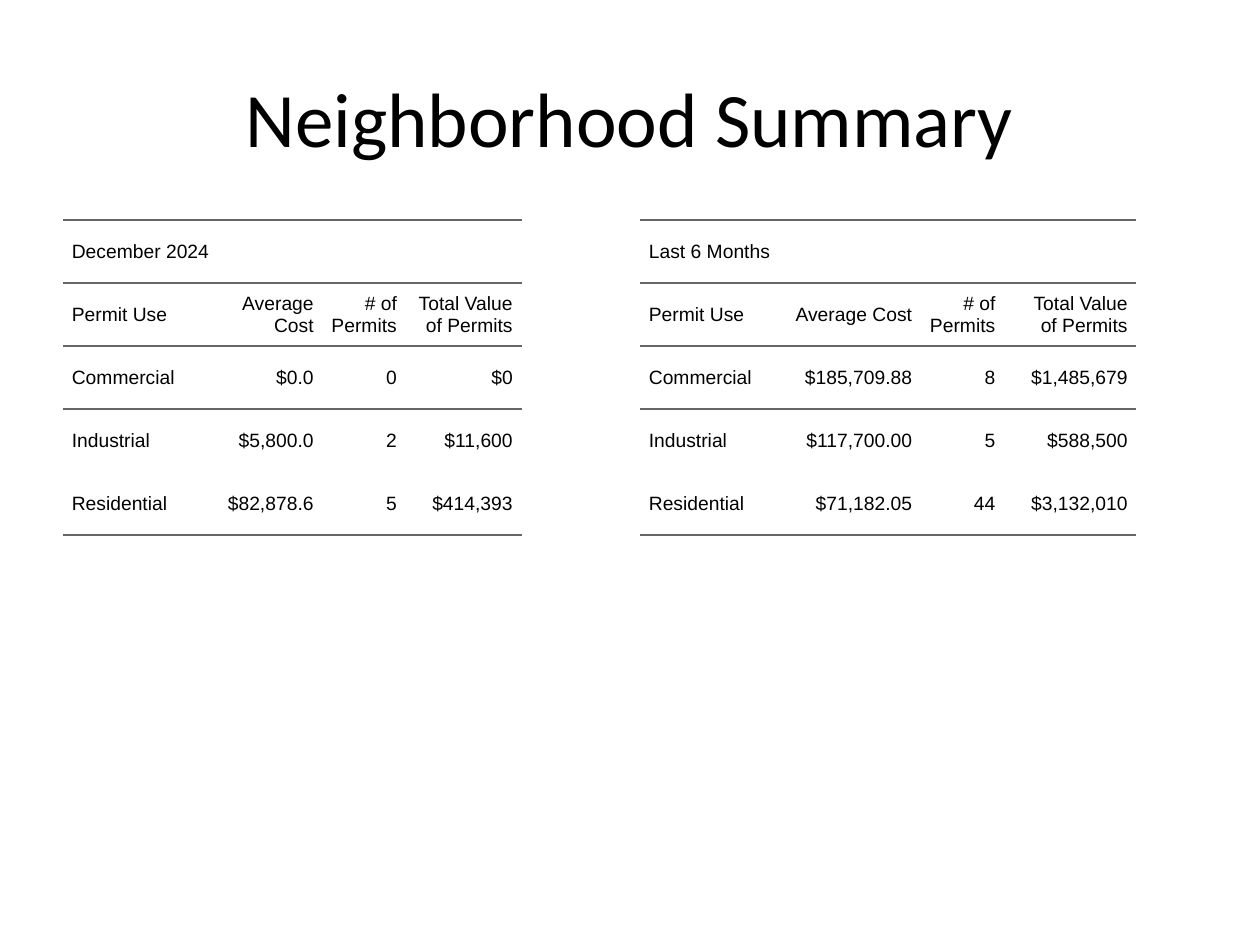
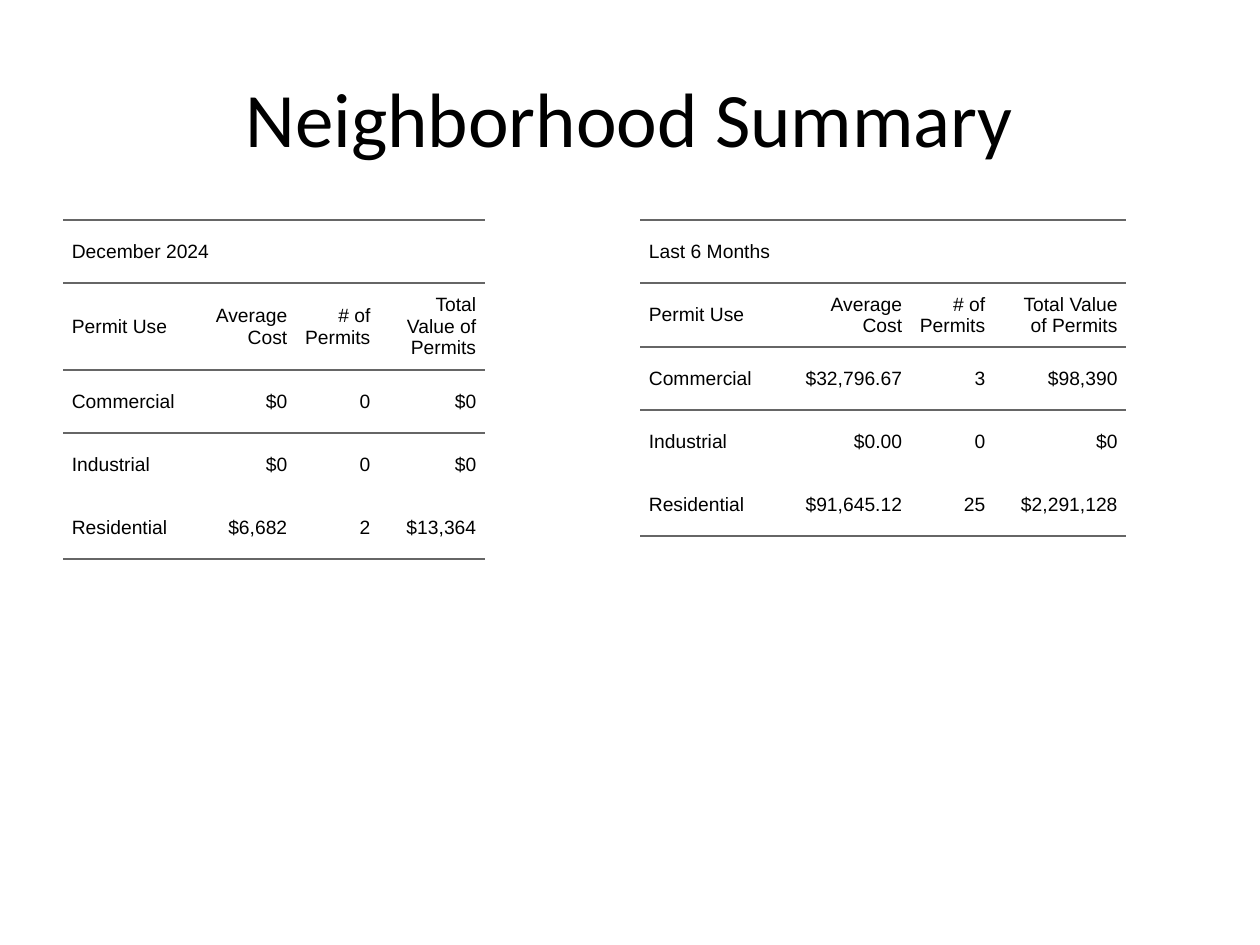
from lxml.etree import SubElement
from pptx import Presentation
from pptx.dml.color import RGBColor
from pptx.enum.text import MSO_ANCHOR, PP_ALIGN
from pptx.oxml.ns import qn
from pptx.util import Inches, Pt

BLACK = RGBColor(0x00, 0x00, 0x00)
RULE_GRAY = RGBColor(0x66, 0x66, 0x66)
TITLE_FONT = "Calibri"
TABLE_FONT = "Arial"
PLAIN_TABLE_STYLE = "{2D5ABB26-0587-4C30-8999-92F81FD0307C}"

SLIDE_WIDTH, SLIDE_HEIGHT = Inches(10), Inches(7.5)
MARGIN = 0.05
TITLE_TOP, TITLE_HEIGHT = 0.04, 1 / 6
TABLE_TOP, TABLE_HEIGHT, TABLE_WIDTH = 0.233, 0.66, 0.442
TABLE_LEFTS = (MARGIN, 1 - MARGIN - TABLE_WIDTH)
ROW_HEIGHT = Inches(0.5)
CELL_PADDING = Inches(0.07)
RULE_WIDTH = Pt(1.5)

TITLE = "Neighborhood Summary"
PERIODS = ("December 2024", "Last 6 Months")
HEADINGS = ("Permit Use", "Average Cost", "# of Permits", "Total Value of Permits")
PERMIT_USES = ("Commercial", "Industrial", "Residential")

SUMMARIES = (
    (
        ((1.1, 0.96, 0.66, 0.92),
         (("$0.0", "0", "$0"),
          ("$5,800.0", "2", "$11,600"),
          ("$82,878.6", "5", "$414,393"))),
        ((1.1, 1.13, 0.66, 1.05),
         (("$185,709.88", "8", "$1,485,679"),
          ("$117,700.00", "5", "$588,500"),
          ("$71,182.05", "44", "$3,132,010"))),
    ),
    (
        ((1.1, 0.75, 0.66, 0.84),
         (("$0", "0", "$0"),
          ("$0", "0", "$0"),
          ("$6,682", "2", "$13,364"))),
        ((1.1, 1.05, 0.66, 1.05),
         (("$32,796.67", "3", "$98,390"),
          ("$0.00", "0", "$0"),
          ("$91,645.12", "25", "$2,291,128"))),
    ),
)


def share_box(left, top, width, height):
    """Turn shares of the slide into lengths."""
    return (int(left * SLIDE_WIDTH), int(top * SLIDE_HEIGHT),
            int(width * SLIDE_WIDTH), int(height * SLIDE_HEIGHT))


def write_text(text_frame, text, font, size, align=PP_ALIGN.LEFT, spacing=0):
    """Write one formatted paragraph."""
    text_frame.word_wrap = True
    paragraph = text_frame.paragraphs[0]
    paragraph.alignment = align
    paragraph.space_before = paragraph.space_after = Pt(spacing)
    run = paragraph.add_run()
    run.text = text
    run.font.name = font
    run.font.size = Pt(size)
    run.font.color.rgb = BLACK


def add_title(slide, text):
    """Add the centred slide title."""
    box = slide.shapes.add_textbox(
        *share_box(MARGIN, TITLE_TOP, 1 - 2 * MARGIN, TITLE_HEIGHT))
    box.text_frame.vertical_anchor = MSO_ANCHOR.MIDDLE
    write_text(box.text_frame, text, font=TITLE_FONT, size=44, align=PP_ALIGN.CENTER)


def add_rule(cell, side):
    """Draw a gray rule on one side of a cell."""
    properties = cell._tc.get_or_add_tcPr()
    line = SubElement(properties, qn(f"a:{side}"), w=str(RULE_WIDTH))
    fill = SubElement(line, qn("a:solidFill"))
    SubElement(fill, qn("a:srgbClr"), val=str(RULE_GRAY))


def format_cell(cell, row, last_row):
    """Set the padding, rules and fill of a cell."""
    cell.vertical_anchor = MSO_ANCHOR.MIDDLE
    cell.margin_left = cell.margin_right = CELL_PADDING
    cell.margin_top = cell.margin_bottom = CELL_PADDING
    if row <= 2:
        add_rule(cell, "lnT")
    if row <= 1 or row == last_row:
        add_rule(cell, "lnB")
    cell.fill.background()


def add_permit_table(slide, left, period, column_widths, figures):
    """Add a permit table with its period spanning the first row."""
    rows = [(period,), HEADINGS]
    rows += [(use, *values) for use, values in zip(PERMIT_USES, figures)]
    box = share_box(left, TABLE_TOP, TABLE_WIDTH, TABLE_HEIGHT)
    frame = slide.shapes.add_table(len(rows), len(HEADINGS), *box)
    table = frame.table
    table.first_row = table.horz_banding = False
    frame._element.find(".//" + qn("a:tableStyleId")).text = PLAIN_TABLE_STYLE
    for column, width in zip(table.columns, column_widths):
        column.width = Inches(width)
    for row in table.rows:
        row.height = ROW_HEIGHT
    frame.left, frame.top, frame.width, frame.height = box
    table.cell(0, 0).merge(table.cell(0, len(HEADINGS) - 1))
    for row, texts in enumerate(rows):
        for column in range(len(HEADINGS)):
            format_cell(table.cell(row, column), row, len(rows) - 1)
        for column, text in enumerate(texts):
            write_text(table.cell(row, column).text_frame, text,
                       font=TABLE_FONT, size=11, spacing=5,
                       align=PP_ALIGN.RIGHT if column else PP_ALIGN.LEFT)


def main():
    """Build and save the neighborhood summaries."""
    presentation = Presentation()
    presentation.slide_width, presentation.slide_height = SLIDE_WIDTH, SLIDE_HEIGHT
    for summary in SUMMARIES:
        slide = presentation.slides.add_slide(presentation.slide_layouts[6])
        for left, period, (widths, figures) in zip(TABLE_LEFTS, PERIODS, summary):
            add_permit_table(slide, left, period, widths, figures)
        add_title(slide, TITLE)
    presentation.save("out.pptx")


if __name__ == "__main__":
    main()
